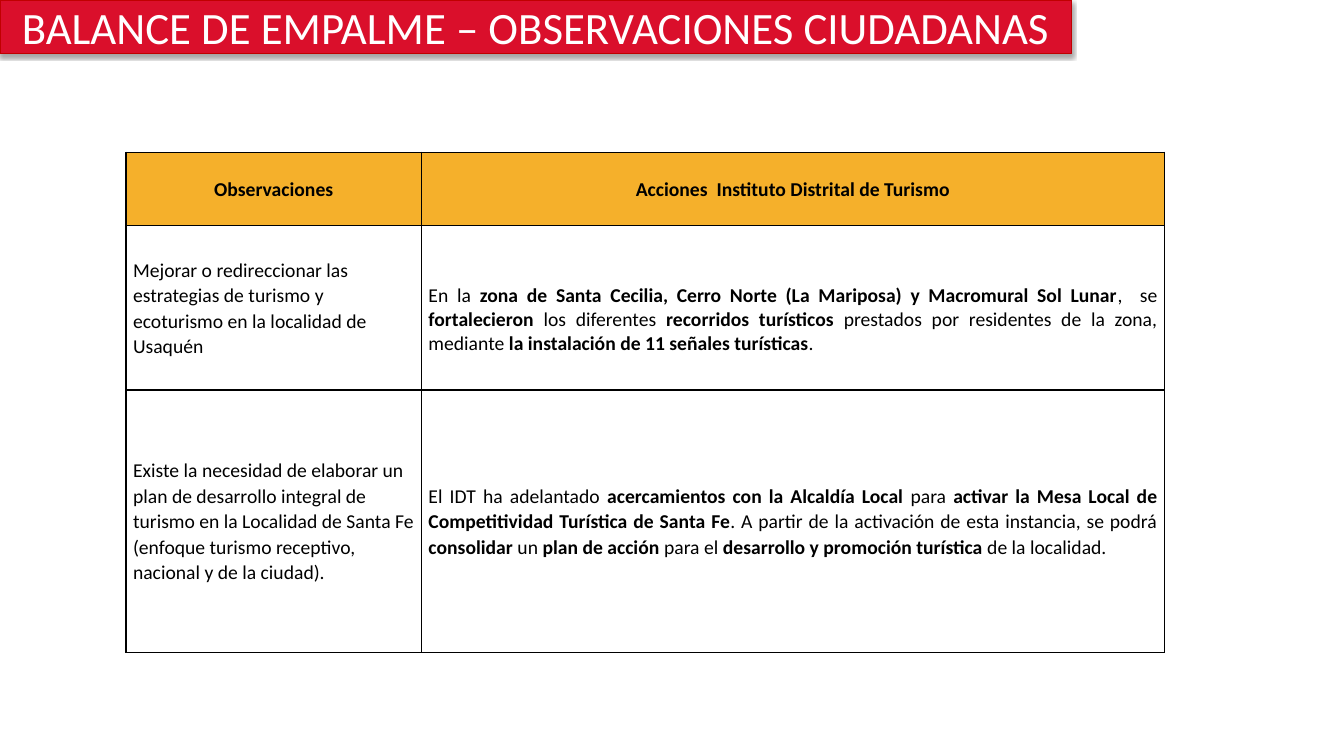
from pptx import Presentation
from pptx import util as u
from pptx.dml.color import RGBColor
from pptx.enum import text
from pptx.oxml import parse_xml
from pptx.oxml.ns import nsdecls

RED = RGBColor(0xDA, 0x0F, 0x2B)
DARK_RED = RGBColor(0xC0, 0x00, 0x00)
AMBER = RGBColor(0xF5, 0xB0, 0x2B)
WHITE = RGBColor(0xFF, 0xFF, 0xFF)
BLACK = RGBColor(0x00, 0x00, 0x00)

FONT = "Calibri"
LINE_SPACING = 1.07
COLUMN_WIDTHS = (2.93, 7.37)
ROW_HEIGHTS = (0.73, 1.63, 2.6)

TITLE = "BALANCE DE EMPALME – OBSERVACIONES CIUDADANAS"
HEADERS = ("Observaciones", "Acciones  Instituto Distrital de Turismo")
OBSERVATIONS = (
    "Mejorar o redireccionar las estrategias de turismo y ecoturismo en la localidad de Usaquén",
    "Existe la necesidad de elaborar un plan de desarrollo integral de turismo en la "
    "Localidad de Santa Fe (enfoque turismo receptivo, nacional y de la ciudad).",
)
SIGNS_ACTION = (
    ("En la ", False),
    ("zona de Santa Cecilia, Cerro Norte (La Mariposa) y Macromural Sol Lunar", True),
    (",  se ", False),
    ("fortalecieron", True),
    (" los diferentes ", False),
    ("recorridos turísticos ", True),
    ("prestados por residentes de la zona, mediante ", False),
    ("la instalación de 11 señales turísticas", True),
    (".", False),
)
PLAN_ACTION = (
    ("El IDT ha adelantado ", False),
    ("acercamientos con la Alcaldía Local ", True),
    ("para ", False),
    ("activar la Mesa Local de Competitividad Turística de Santa Fe", True),
    (". A partir de la activación de esta instancia, se podrá ", False),
    ("consolidar", True),
    (" un ", False),
    ("plan de acción ", True),
    ("para el ", False),
    ("desarrollo y promoción turística", True),
    (" de la localidad.", False),
)


def add_span(para, words, size, color, bold=False):
    span = para.add_run()
    span.text = words
    span.font.name = FONT
    span.font.size = u.Pt(size)
    span.font.bold = bold
    span.font.color.rgb = color


def add_shadow(shape):
    shape._element.spPr.append(parse_xml(
        f'<a:effectLst {nsdecls("a")}>'
        f'<a:outerShdw blurRad="{u.Pt(3.1)}" dist="{u.Pt(1.8)}" dir="5400000" rotWithShape="0">'
        '<a:srgbClr val="000000"><a:alpha val="35000"/></a:srgbClr>'
        '</a:outerShdw></a:effectLst>'))


def format_title(title):
    title.left, title.top = u.Inches(0), u.Inches(0)
    title.width, title.height = u.Inches(10.63), u.Inches(0.53)
    title.fill.solid()
    title.fill.fore_color.rgb = RED
    title.line.color.rgb = DARK_RED
    title.line.width = u.Pt(0.75)
    add_shadow(title)
    frame = title.text_frame
    frame.word_wrap = True
    frame.auto_size = text.MSO_AUTO_SIZE.NONE
    frame.vertical_anchor = text.MSO_ANCHOR.MIDDLE
    para = frame.paragraphs[0]
    para.alignment = text.PP_ALIGN.CENTER
    add_span(para, TITLE, 32, WHITE)


def add_borders(cell):
    properties = cell._tc.get_or_add_tcPr()
    for side in "LRTB":
        properties.append(parse_xml(
            f'<a:ln{side} {nsdecls("a")} w="{u.Pt(1)}"><a:solidFill>'
            f'<a:srgbClr val="{BLACK}"/></a:solidFill></a:ln{side}>'))


def fill_cell(cell, spans, alignment, spacing=LINE_SPACING, color=None, top=0):
    add_borders(cell)
    if color is None:
        cell.fill.background()
    else:
        cell.fill.solid()
        cell.fill.fore_color.rgb = color
    cell.margin_left = cell.margin_right = u.Inches(0.07)
    cell.margin_top, cell.margin_bottom = u.Inches(top), u.Inches(0)
    cell.vertical_anchor = text.MSO_ANCHOR.MIDDLE
    para = cell.text_frame.paragraphs[0]
    para.alignment = alignment
    para.line_spacing = spacing
    for words, bold in spans:
        add_span(para, words, 14, BLACK, bold)


def add_actions_table(page):
    frame = page.shapes.add_table(
        len(ROW_HEIGHTS), len(COLUMN_WIDTHS), u.Inches(1.25), u.Inches(1.51),
        u.Inches(sum(COLUMN_WIDTHS)), u.Inches(sum(ROW_HEIGHTS)))
    table = frame.table
    table.first_row = False
    table.horz_banding = False
    for column, width in zip(table.columns, COLUMN_WIDTHS):
        column.width = u.Inches(width)
    for row, height in zip(table.rows, ROW_HEIGHTS):
        row.height = u.Inches(height)
    for index, header in enumerate(HEADERS):
        fill_cell(table.cell(0, index), [(header, True)], text.PP_ALIGN.CENTER, color=AMBER)
    for index, observation in enumerate(OBSERVATIONS, 1):
        fill_cell(table.cell(index, 0), [(observation, False)], text.PP_ALIGN.LEFT)
    fill_cell(table.cell(1, 1), SIGNS_ACTION, text.PP_ALIGN.JUSTIFY, spacing=1.0, top=0.24)
    fill_cell(table.cell(2, 1), PLAN_ACTION, text.PP_ALIGN.JUSTIFY)


def main():
    deck = Presentation()
    deck.slide_width, deck.slide_height = u.Inches(13.33), u.Inches(7.5)
    page = deck.slides.add_slide(deck.slide_layouts[5])
    format_title(page.shapes.title)
    add_actions_table(page)
    deck.save("out.pptx")


if __name__ == "__main__":
    main()
